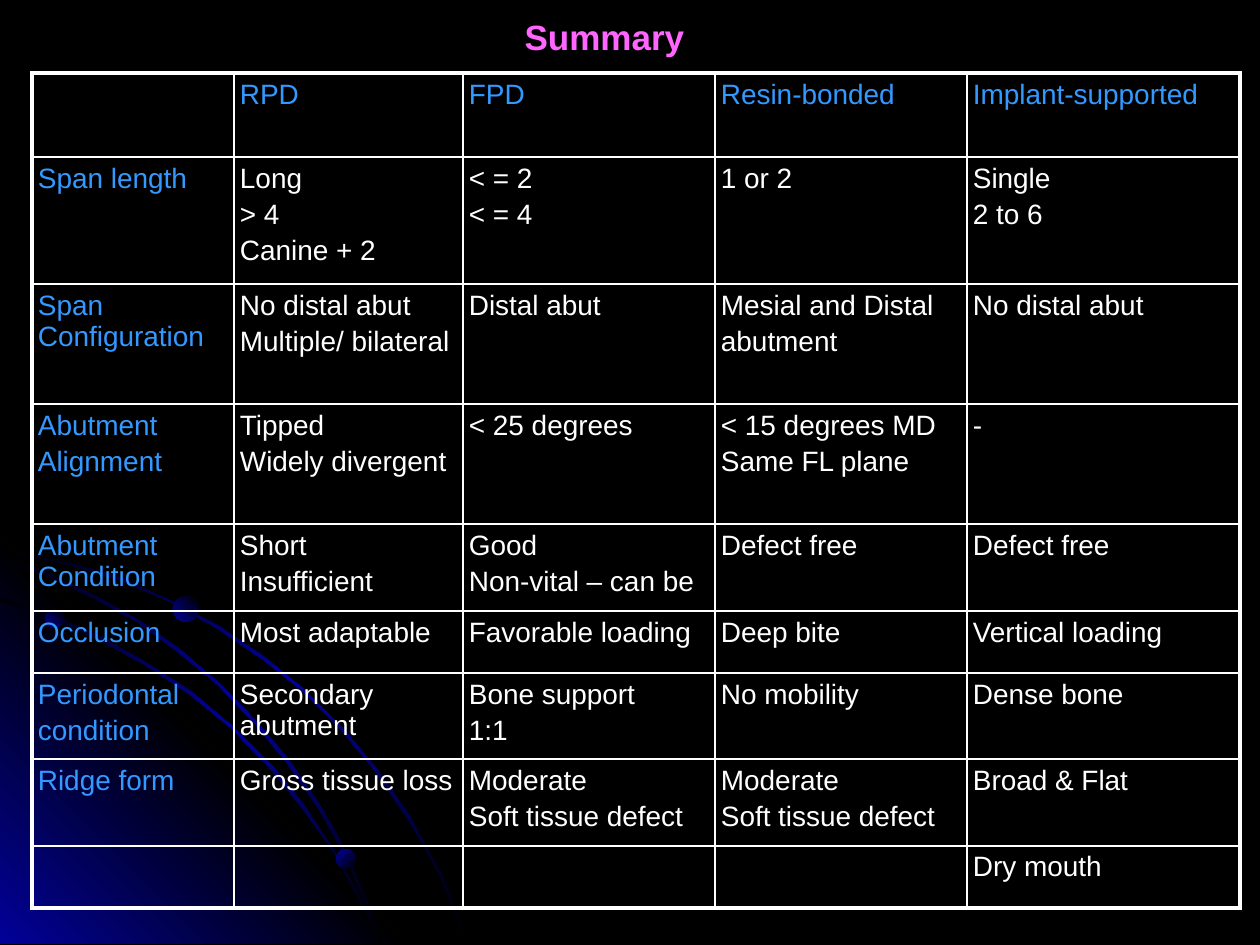
from lxml import etree
from pptx import Presentation
from pptx import util as u
from pptx.dml.color import RGBColor
from pptx.enum import shapes, text
from pptx.oxml import parse_xml
from pptx.oxml.ns import nsdecls, qn

PX = 914400 / 126
COLORS = {"black": "000000", "blue": "010199", "heading": "3399FF",
          "white": "FFFFFF", "title": "FF66FF"}
THICK, THIN, INSET = 2.25, 1, 6

COLUMNS = [202, 229, 252, 252, 273]
ROWS = [84, 127, 120, 120, 87, 62, 86, 87, 62]
SUMMARY = [
    ["", "RPD", "FPD", "Resin-bonded", "Implant-supported"],
    ["Span length", "Long\n> 4\nCanine + 2", "< = 2\n< = 4", "1 or 2", "Single\n2 to 6"],
    ["Span Configuration", "No distal abut\nMultiple/ bilateral", "Distal abut",
     "Mesial and Distal\nabutment", "No distal abut"],
    ["Abutment\nAlignment", "Tipped\nWidely divergent", "< 25 degrees",
     "< 15 degrees MD\nSame FL plane", "-"],
    ["Abutment Condition", "Short\nInsufficient", "Good\nNon-vital – can be",
     "Defect free", "Defect free"],
    ["Occlusion", "Most adaptable", "Favorable loading", "Deep bite", "Vertical loading"],
    ["Periodontal\ncondition", "Secondary abutment", "Bone support\n1:1",
     "No mobility", "Dense bone"],
    ["Ridge form", "Gross tissue loss", "Moderate\nSoft tissue defect",
     "Moderate\nSoft tissue defect", "Broad & Flat"],
    ["", "", "", "", "Dry mouth"],
]

GLOW = [(406, 944), (0, 944), (0, 538)]
OUTER_ARC = [
    (72, 563), (35, 556), (0, 548), (0, 552), (35, 558), (71, 566), (122, 581), (170, 602),
    (218, 629), (262, 659), (304, 692), (341, 730), (375, 771), (407, 818), (425, 848),
    (441, 879), (454, 911), (466, 944), (469, 944), (456, 911), (444, 879), (427, 848),
    (410, 816), (378, 770), (343, 728), (305, 690), (263, 656), (219, 626), (171, 601),
    (123, 578)]
INNER_ARC = [
    (359, 900), (370, 922), (379, 944), (382, 944), (373, 920), (360, 897), (335, 852),
    (305, 806), (271, 764), (232, 726), (192, 692), (147, 663), (100, 636), (52, 615),
    (0, 598), (0, 601), (49, 617), (97, 639), (145, 665), (189, 694), (231, 728),
    (268, 766), (302, 808), (334, 853)]
MIDDLE_ARC = [
    (0, 557), (0, 559), (45, 576), (93, 598), (137, 622), (179, 653), (218, 685),
    (255, 724), (286, 762), (318, 808), (336, 840), (353, 874), (368, 910), (379, 944),
    (382, 944), (370, 907), (355, 873), (339, 838), (320, 805), (289, 760), (257, 722),
    (220, 684), (181, 650), (140, 621), (96, 596), (49, 573)]


def px(length):
    """Turn pixels into EMU."""
    return u.Emu(round(length * PX))


def color(name):
    """Look up a named colour."""
    return RGBColor.from_string(COLORS[name])


def paint_gradient(shape, names, angle):
    """Fill a shape with evenly spaced colour stops, without line or shadow."""
    shape.shadow.inherit = False
    shape.line.fill.background()
    shape.fill.background()
    stops = "".join(
        f'<a:gs pos="{100000 * i // (len(names) - 1)}"><a:srgbClr val="{COLORS[name]}"/></a:gs>'
        for i, name in enumerate(names))
    gradient = parse_xml(
        f'<a:gradFill {nsdecls("a")} rotWithShape="1"><a:gsLst>{stops}</a:gsLst>'
        f'<a:lin ang="{angle * 60000}" scaled="1"/></a:gradFill>')
    properties = shape._element.spPr
    properties.replace(properties.find(qn("a:noFill")), gradient)


def add_outline(group, points, names, angle):
    """Draw a closed gradient outline."""
    builder = group.shapes.build_freeform(*points[0], scale=PX)
    builder.add_line_segments(points[1:], close=True)
    paint_gradient(builder.convert_to_shape(), names, angle)


def add_planet(group, left, top, size, angle):
    """Draw a small gradient disc on an arc."""
    planet = group.shapes.add_shape(
        shapes.MSO_SHAPE.OVAL, px(left), px(top), px(size), px(size))
    paint_gradient(planet, ["black", "blue"], angle)


def add_orbits(slide):
    """Draw the glowing corner with its arcs and planets."""
    orbits = slide.shapes.add_group_shape()
    arc_colors = ["black", "blue", "black"]
    add_outline(orbits, OUTER_ARC, arc_colors, 225)
    add_outline(orbits, GLOW, ["blue", "black", "blue"], 135)
    add_outline(orbits, INNER_ARC, arc_colors, 225)
    add_outline(orbits, MIDDLE_ARC, arc_colors, 225)
    for planet in [(45, 609, 19, 135), (336, 849, 20, 225), (173, 596, 26, 135)]:
        add_planet(orbits, *planet)


def format_runs(paragraph, size, name, bold=False):
    """Set the font of every run in a paragraph."""
    for run in paragraph.runs:
        run.font.name = "Arial"
        run.font.size = u.Pt(size)
        run.font.bold = bold
        run.font.color.rgb = color(name)


def set_title(slide, words):
    """Place and format the slide title."""
    title = slide.shapes.title
    title.left, title.top, title.width, title.height = px(69), px(9), px(1071), px(52)
    frame = title.text_frame
    frame.text = words
    frame.word_wrap = True
    frame.auto_size = text.MSO_AUTO_SIZE.SHAPE_TO_FIT_TEXT
    frame.vertical_anchor = text.MSO_ANCHOR.TOP
    frame.margin_left = frame.margin_right = frame.margin_top = frame.margin_bottom = px(INSET)
    frame.paragraphs[0].alignment = text.PP_ALIGN.CENTER
    format_runs(frame.paragraphs[0], 20, "title", bold=True)


def set_borders(cell, widths):
    """Give a cell white borders of the widths for left, right, top and bottom."""
    properties = cell._tc.get_or_add_tcPr()
    for position, (side, width) in enumerate(zip("LRTB", widths)):
        line = etree.Element(qn(f"a:ln{side}"), w=str(u.Pt(width)))
        fill = etree.SubElement(line, qn("a:solidFill"))
        etree.SubElement(fill, qn("a:srgbClr"), val=COLORS["white"])
        properties.insert(position, line)


def fill_cell(cell, words, name):
    """Write and format the lines of one cell."""
    cell.fill.background()
    cell.margin_left = cell.margin_right = cell.margin_top = cell.margin_bottom = px(INSET)
    cell.text_frame.text = words
    for paragraph in cell.text_frame.paragraphs:
        paragraph.space_before = u.Pt(3)
        format_runs(paragraph, 16, name)


def add_summary(slide):
    """Build the comparison table."""
    last_row, last_column = len(ROWS) - 1, len(COLUMNS) - 1
    table = slide.shapes.add_table(
        len(ROWS), len(COLUMNS), px(32), px(73), px(sum(COLUMNS)), px(sum(ROWS))).table
    table.first_row = table.horz_banding = False
    for column, width in zip(table.columns, COLUMNS):
        column.width = px(width)
    for r, (height, entries) in enumerate(zip(ROWS, SUMMARY)):
        table.rows[r].height = px(height)
        for c, words in enumerate(entries):
            cell = table.cell(r, c)
            fill_cell(cell, words, "heading" if r == 0 or c == 0 else "white")
            edges = [c == 0, c == last_column, r == 0, r == last_row]
            set_borders(cell, [THICK if edge else THIN for edge in edges])


def main():
    """Build and save the slide."""
    deck = Presentation()
    deck.slide_width, deck.slide_height = px(1260), px(945)
    slide = deck.slides.add_slide(deck.slide_layouts[5])
    slide.background.fill.solid()
    slide.background.fill.fore_color.rgb = color("black")
    add_orbits(slide)
    set_title(slide, "Summary")
    add_summary(slide)
    deck.save("out.pptx")


if __name__ == "__main__":
    main()
